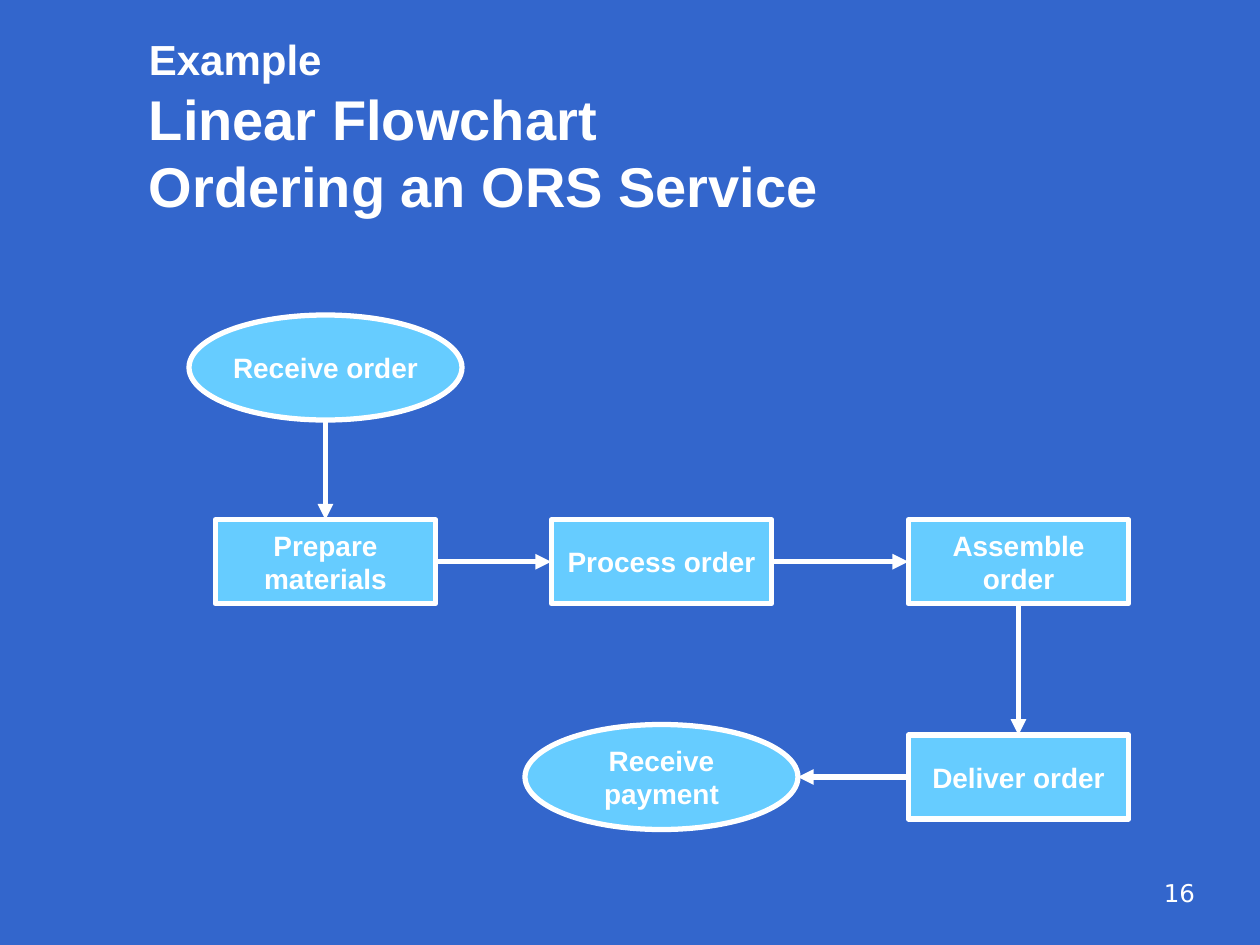
"""Build the linear flowchart slide for ordering an ORS service."""
from lxml import etree
from pptx import Presentation, util as u
from pptx.dml.color import RGBColor
from pptx.enum import shapes, text
from pptx.oxml.ns import qn

WHITE = RGBColor(0xFF, 0xFF, 0xFF)
SKY = RGBColor(0x66, 0xCC, 0xFF)
BLUE = RGBColor(0x33, 0x66, 0xCC)
TOP, LEFT, BOTTOM, RIGHT = range(4)
COLUMNS, ROWS = 120, 90

deck = Presentation()
deck.slide_width, deck.slide_height = u.Inches(10), u.Inches(7.5)
page = deck.slides.add_slide(deck.slide_layouts[6])
page.background.fill.solid()
page.background.fill.fore_color.rgb = BLUE


def grid(*lengths):
    units = (deck.slide_width / COLUMNS, deck.slide_height / ROWS)
    return [u.Emu(round(length * units[i % 2])) for i, length in enumerate(lengths)]


def write(para, words, size, name="Arial", bold=True):
    span = para.add_run()
    span.text = words
    for key, value in {"size": u.Pt(size), "name": name, "bold": bold}.items():
        setattr(span.font, key, value)
    span.font.color.rgb = WHITE


title = page.shapes.add_textbox(*grid(13, 6.4, 102, 15)).text_frame
title.word_wrap = True
title.vertical_anchor = text.MSO_ANCHOR.BOTTOM
heading = title.paragraphs[0]
write(heading, "Example", 24)
for words in ("Linear Flowchart", "Ordering an ORS Service"):
    heading.add_line_break()
    write(heading, words, 32)

number = page.shapes.add_textbox(*grid(90, 83, 25, 6)).text_frame
number.word_wrap = True
number.paragraphs[0].alignment = text.PP_ALIGN.RIGHT
write(number.paragraphs[0], "16", 14, "DejaVu Sans", False)

OVAL, BOX = shapes.MSO_SHAPE.OVAL, shapes.MSO_SHAPE.RECTANGLE
LOOKS = {OVAL: (26, 10, 0), BOX: (21, 8, 0.1)}
COLUMN, ROW = (31, 63, 97), (35, 53.5, 74)
STEPS = [
    ("Receive order", OVAL, 0, 0),
    ("Prepare materials", BOX, 0, 1),
    ("Process order", BOX, 1, 1),
    ("Assemble order", BOX, 2, 1),
    ("Deliver order", BOX, 2, 2),
    ("Receive payment", OVAL, 1, 2),
]
boxes = []
for words, kind, column, row in STEPS:
    width, height, margin = LOOKS[kind]
    left, top = COLUMN[column] - width / 2, ROW[row] - height / 2
    box = page.shapes.add_shape(kind, *grid(left, top, width, height))
    box.shadow.inherit = False
    box.fill.solid()
    box.fill.fore_color.rgb = SKY
    box.line.color.rgb = WHITE
    box.line.width = u.Pt(3)
    frame = box.text_frame
    layout = {
        "word_wrap": True,
        "vertical_anchor": text.MSO_ANCHOR.MIDDLE,
        "margin_left": u.Inches(margin),
        "margin_right": u.Inches(margin),
        "margin_top": 0,
        "margin_bottom": 0,
    }
    for key, value in layout.items():
        setattr(frame, key, value)
    frame.paragraphs[0].alignment = text.PP_ALIGN.CENTER
    write(frame.paragraphs[0], words, 16)
    boxes.append(box)

SIDES = [(BOTTOM, TOP), (RIGHT, LEFT), (RIGHT, LEFT), (BOTTOM, TOP), (LEFT, RIGHT)]
SHARES = {TOP: (0.5, 0), LEFT: (0, 0.5), BOTTOM: (0.5, 1), RIGHT: (1, 0.5)}
for source, target, sides in zip(boxes, boxes[1:], SIDES):
    ends = []
    for box, side in zip((source, target), sides):
        across, down = SHARES[side]
        ends += [round(box.left + across * box.width), round(box.top + down * box.height)]
    arrow = page.shapes.add_connector(shapes.MSO_CONNECTOR.STRAIGHT, *ends)
    if source.auto_shape_type == BOX:
        arrow.begin_connect(source, sides[0])
    if target.auto_shape_type == BOX:
        arrow.end_connect(target, sides[1])
    arrow.line.color.rgb = WHITE
    arrow.line.width = u.Pt(3)
    etree.SubElement(arrow.line._get_or_add_ln(), qn("a:tailEnd"), type="triangle")
    etree.SubElement(arrow._element.spPr, qn("a:effectLst"))

deck.save("out.pptx")
